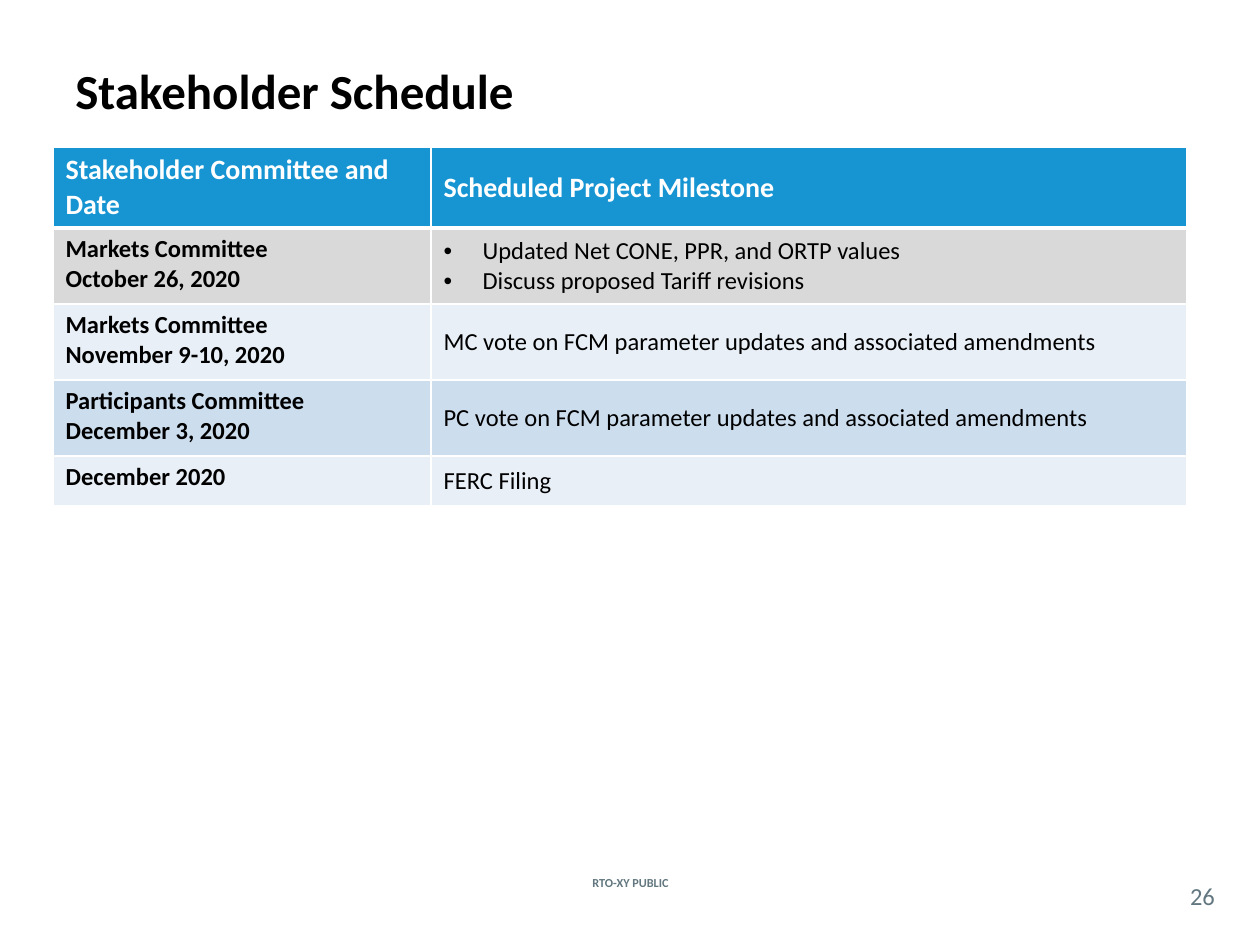
from lxml.etree import SubElement
from pptx import Presentation
from pptx.dml.color import RGBColor
from pptx.enum.text import MSO_ANCHOR as Anchor, PP_ALIGN as Align
from pptx.oxml.ns import qn
from pptx.util import Emu, Pt

EMU_PER_PX = 914400 / 126
FONT = "Calibri"
BLACK, WHITE, SLATE = "000000", "FFFFFF", "62777F"
BLUE, GREY, PALE, LIGHT = "1795D2", "D9D9D9", "E8EFF7", "CCDDEE"

TABLE_BOX = (53, 147)
COLUMN_WIDTHS = (378, 756)
HEADER = ("Stakeholder Committee and Date", "Scheduled Project Milestone")
# Row height, fill, committee and date lines, milestone lines
SCHEDULE = [
    (76, GREY, ["Markets Committee", "October 26, 2020"],
     ["Updated Net CONE, PPR, and ORTP values",
      "Discuss proposed Tariff revisions"]),
    (76, PALE, ["Markets Committee", "November 9-10, 2020"],
     ["MC vote on FCM parameter updates and associated amendments"]),
    (76, LIGHT, ["Participants Committee", "December 3, 2020"],
     ["PC vote on FCM parameter updates and associated amendments"]),
    (50, PALE, ["December 2020"], ["FERC Filing"]),
]
HEADER_HEIGHT = 81


def px(length):
    return Emu(round(length * EMU_PER_PX))


def color(value):
    return RGBColor.from_string(value)


def add_bullet(paragraph):
    properties = paragraph._p.get_or_add_pPr()
    properties.set("marL", str(px(39)))
    properties.set("indent", str(px(-39)))
    SubElement(properties, qn("a:buFont"), typeface="Arial")
    SubElement(properties, qn("a:buChar"), char="•")


def write_lines(frame, lines, size, ink, bold=False, align=Align.LEFT):
    """Fill a text frame with one paragraph a line; several plain lines get bullets."""
    frame.word_wrap = True
    for index, line in enumerate(lines):
        paragraph = frame.add_paragraph() if index else frame.paragraphs[0]
        paragraph.alignment = align
        if len(lines) > 1 and not bold:
            add_bullet(paragraph)
        run = paragraph.add_run()
        run.text = line
        formats = {"name": FONT, "size": Pt(size), "bold": bold}
        for name, value in formats.items():
            setattr(run.font, name, value)
        run.font.color.rgb = color(ink)


def add_text(slide, box, text, inset=None, **style):
    shape = slide.shapes.add_textbox(*map(px, box))
    frame = shape.text_frame
    frame.vertical_anchor = Anchor.MIDDLE
    if inset is not None:
        for side in ("left", "top", "right", "bottom"):
            setattr(frame, f"margin_{side}", px(inset))
    write_lines(frame, [text], **style)


def set_borders(cell, widths):
    properties = cell._tc.get_or_add_tcPr()
    for side, width in widths.items():
        line = SubElement(properties, qn(f"a:ln{side}"), w=str(Pt(width)))
        fill = SubElement(line, qn("a:solidFill"))
        SubElement(fill, qn("a:srgbClr"), val=WHITE)


def fill_cell(cell, lines, fill, anchor, widths, **style):
    set_borders(cell, widths)
    cell.fill.solid()
    cell.fill.fore_color.rgb = color(fill)
    cell.vertical_anchor = anchor
    write_lines(cell.text_frame, lines, **style)


def add_schedule(slide):
    heights = [HEADER_HEIGHT] + [row[0] for row in SCHEDULE]
    box = (*TABLE_BOX, sum(COLUMN_WIDTHS), sum(heights))
    table = slide.shapes.add_table(
        len(heights), len(COLUMN_WIDTHS), *map(px, box)).table
    for column, width in zip(table.columns, COLUMN_WIDTHS):
        column.width = px(width)
    for row, height in zip(table.rows, heights):
        row.height = px(height)

    thin = dict.fromkeys("LRTB", 1)
    for index, heading in enumerate(HEADER):
        fill_cell(table.cell(0, index), [heading], BLUE, Anchor.MIDDLE,
                  {**thin, "B": 3}, size=16, ink=WHITE, bold=True)
    for index, (_, fill, committee, milestone) in enumerate(SCHEDULE, 1):
        widths = {**thin, "T": 3 if index == 1 else 1}
        fill_cell(table.cell(index, 0), committee, fill, Anchor.TOP,
                  widths, size=14, ink=BLACK, bold=True)
        fill_cell(table.cell(index, 1), milestone, fill, Anchor.MIDDLE,
                  widths, size=14, ink=BLACK)


def main():
    presentation = Presentation()
    presentation.slide_width, presentation.slide_height = px(1260), px(945)
    slide = presentation.slides.add_slide(presentation.slide_layouts[6])
    add_text(slide, (538, 872, 185, 21), "RTO-XY PUBLIC",
             size=7, ink=SLATE, bold=True, align=Align.CENTER)
    add_text(slide, (63, 53, 1134, 73), "Stakeholder Schedule",
             size=28, ink=BLACK, bold=True)
    add_text(slide, (1176, 877, 53, 37), "26", inset=0,
             size=14, ink=SLATE, align=Align.CENTER)
    add_schedule(slide)
    presentation.save("out.pptx")


if __name__ == "__main__":
    main()
